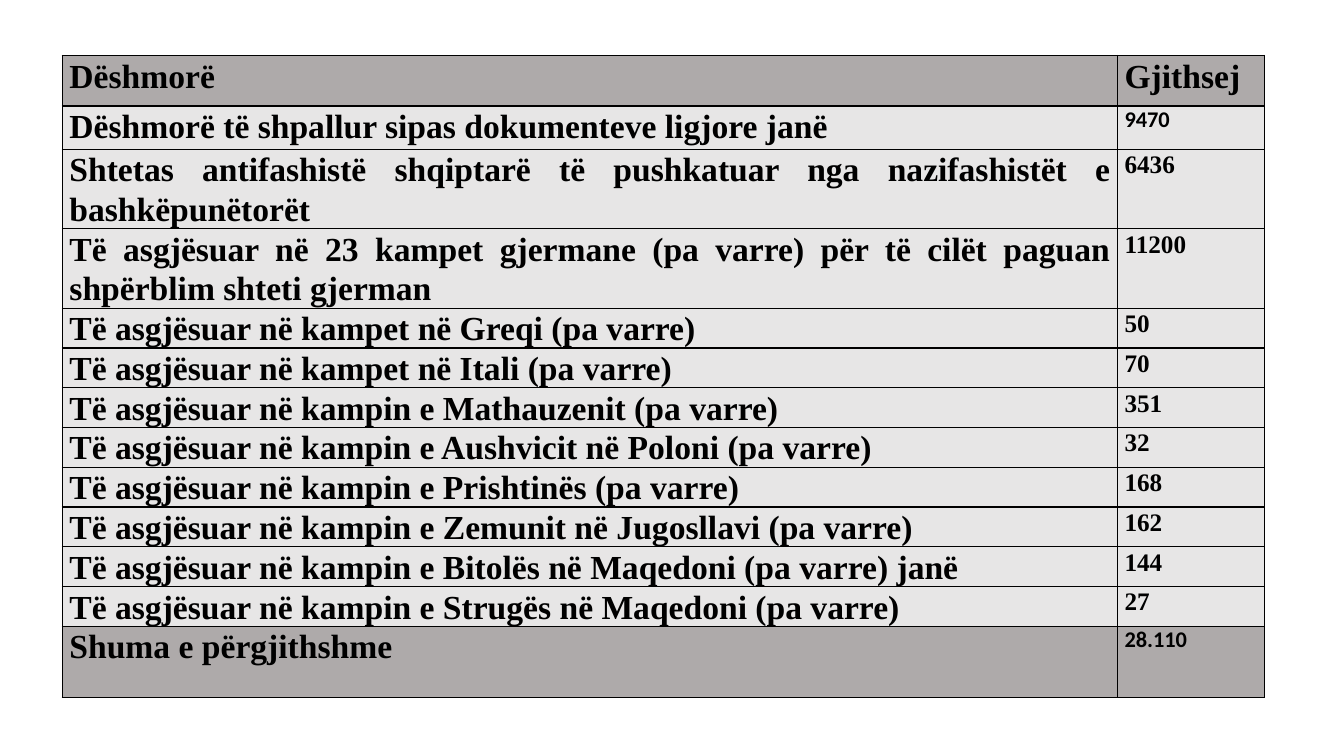
"""Builds a slide with a table of martyrs and their totals."""
from dataclasses import dataclass

from lxml import etree
from pptx import Presentation
from pptx.dml.color import RGBColor
from pptx.enum.text import PP_ALIGN
from pptx.oxml.ns import qn
from pptx.util import Cm, Pt

JUSTIFY = PP_ALIGN.JUSTIFY
LEFT = PP_ALIGN.LEFT
BLANK_LAYOUT = 6


@dataclass(frozen=True)
class Theme:
    """Colours, fonts and type sizes of the deck."""
    ink: str = "000000"
    band: str = "AEAAAA"
    body: str = "E7E6E6"
    serif: str = "Times New Roman"
    sans: str = "Calibri"
    label_size: int = 24
    count_size: int = 18
    total_size: int = 16
    line_spacing: float = 1.07
    border_width: int = 1
    cell_margin: float = 0.18


class TablePage:
    """Holds the theme and the current slide."""

    def __init__(self, deck, theme):
        """Adds a blank slide to the deck."""
        self.theme = theme
        self.page = deck.slides.add_slide(deck.slide_layouts[BLANK_LAYOUT])

    def table(self, left, top, widths, heights):
        """Adds an unbanded table with the given column widths and row heights."""
        frame = self.page.shapes.add_table(
            len(heights), len(widths), Cm(left), Cm(top),
            Cm(sum(widths)), Cm(sum(heights)))
        table = frame.table
        table.first_row = False
        table.horz_banding = False
        for column, width in zip(table.columns, widths):
            column.width = Cm(width)
        for row, height in zip(table.rows, heights):
            row.height = Cm(height)
        return table

    def borders(self, cell):
        """Draws a solid line on every side of a cell."""
        properties = cell._tc.get_or_add_tcPr()
        for side in ("a:lnL", "a:lnR", "a:lnT", "a:lnB"):
            line = etree.SubElement(properties, qn(side),
                                    w=str(Pt(self.theme.border_width)))
            fill = etree.SubElement(line, qn("a:solidFill"))
            etree.SubElement(fill, qn("a:srgbClr"), val=self.theme.ink)

    def cell(self, cell, text, size, fill, sans=False):
        """Formats a cell and writes its text."""
        theme = self.theme
        self.borders(cell)
        cell.fill.solid()
        cell.fill.fore_color.rgb = RGBColor.from_string(fill)
        cell.margin_left = cell.margin_right = Cm(theme.cell_margin)
        cell.margin_top = cell.margin_bottom = 0
        para = cell.text_frame.paragraphs[0]
        para.alignment = LEFT if sans else JUSTIFY
        para.line_spacing = 1.0 if sans else theme.line_spacing
        span = para.add_run()
        span.text = text
        span.font.name = theme.sans if sans else theme.serif
        span.font.size = Pt(size)
        span.font.bold = True
        span.font.color.rgb = RGBColor.from_string(theme.ink)


HEADER = ("Dëshmorë", "Gjithsej")
DECLARED = ("Dëshmorë të shpallur sipas dokumenteve ligjore janë", "9470")
VICTIMS = [
    ("Shtetas antifashistë shqiptarë të pushkatuar nga nazifashistët "
     "e bashkëpunëtorët", "6436"),
    ("Të asgjësuar në 23 kampet gjermane (pa varre) për të cilët paguan "
     "shpërblim shteti gjerman", "11200"),
    ("Të asgjësuar në kampet në Greqi (pa varre)", "50"),
    ("Të asgjësuar në kampet në Itali (pa varre)", "70"),
    ("Të asgjësuar në kampin e Mathauzenit (pa varre)", "351"),
    ("Të asgjësuar në kampin e Aushvicit në Poloni (pa varre)", "32"),
    ("Të asgjësuar në kampin e Prishtinës (pa varre)", "168"),
    ("Të asgjësuar në kampin e Zemunit në Jugosllavi (pa varre)", "162"),
    ("Të asgjësuar në kampin e Bitolës në Maqedoni (pa varre) janë", "144"),
    ("Të asgjësuar në kampin e Strugës në Maqedoni (pa varre)", "27"),
]
TOTAL = ("Shuma e përgjithshme", "28.110")


def main():
    """Builds and saves the deck."""
    deck = Presentation()
    deck.slide_width, deck.slide_height = Cm(33.87), Cm(19.05)
    theme = Theme()
    page = TablePage(deck, theme)

    rows = [(HEADER, theme.band, theme.label_size, False),
            (DECLARED, theme.body, theme.total_size, True)]
    rows += [(victim, theme.body, theme.count_size, False) for victim in VICTIMS]
    rows.append((TOTAL, theme.band, theme.total_size, True))

    heights = [1.27, 1.09] + [0.97] * len(VICTIMS) + [1.8]
    table = page.table(1.57, 1.4, [26.59, 3.71], heights)
    for index, ((label, count), fill, count_size, sans) in enumerate(rows):
        page.cell(table.cell(index, 0), label, theme.label_size, fill)
        page.cell(table.cell(index, 1), count, count_size, fill, sans)

    deck.save("out.pptx")


if __name__ == "__main__":
    main()
